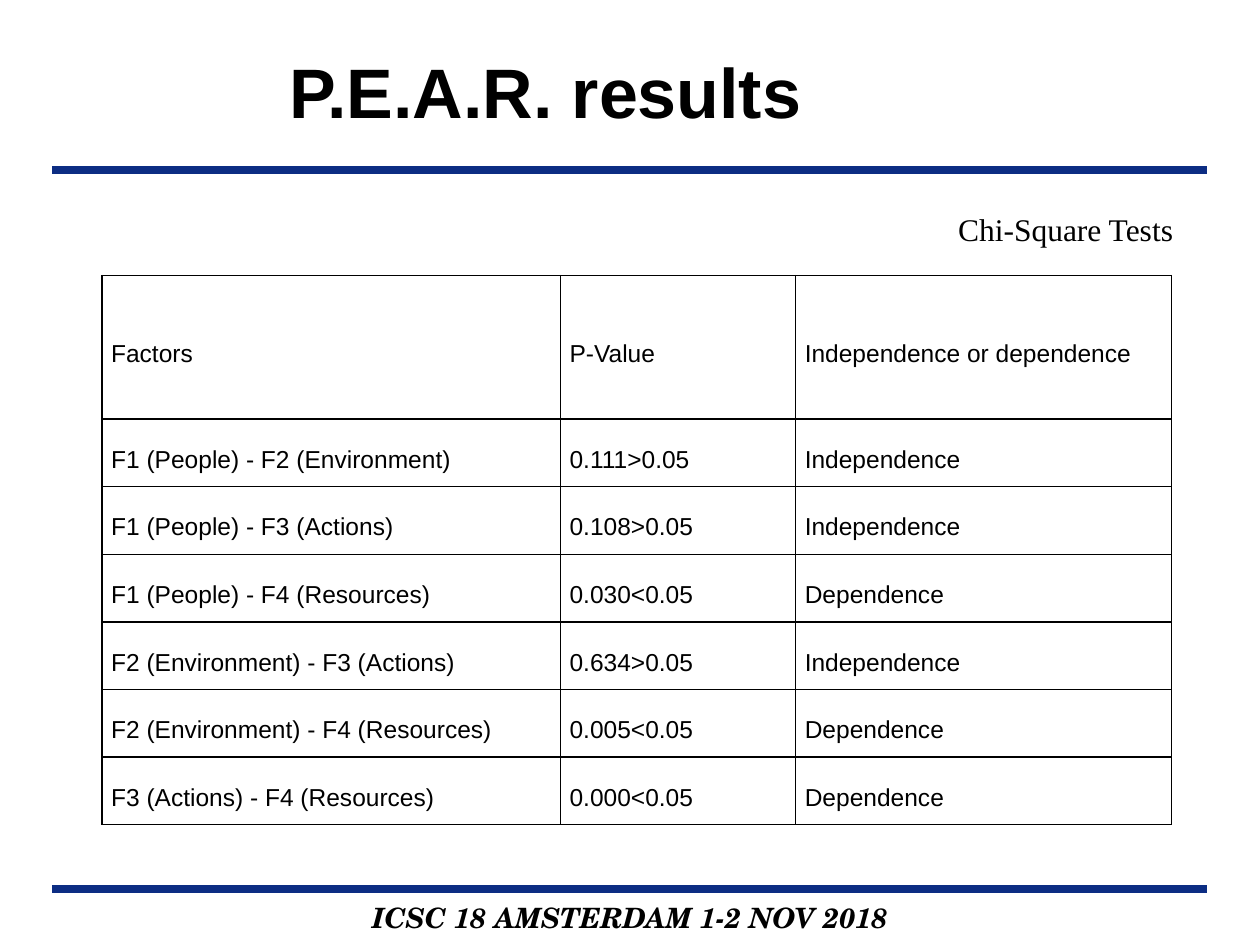
from dataclasses import dataclass

from lxml import etree
from pptx import Presentation
from pptx.dml.color import RGBColor
from pptx.enum import shapes, text
from pptx.oxml import ns
from pptx.util import Pt

# Content
TITLE = "P.E.A.R. results"
CAPTION = "Chi-Square Tests"
FOOTER = "ICSC 18 AMSTERDAM 1-2 NOV 2018"
ROWS = [
    ("Factors", "P-Value", "Independence or dependence"),
    ("F1 (People) - F2 (Environment)", "0.111>0.05", "Independence"),
    ("F1 (People) - F3 (Actions)", "0.108>0.05", "Independence"),
    ("F1 (People) - F4 (Resources)", "0.030<0.05", "Dependence"),
    ("F2 (Environment) - F3 (Actions)", "0.634>0.05", "Independence"),
    ("F2 (Environment) - F4 (Resources)", "0.005<0.05", "Dependence"),
    ("F3 (Actions) - F4 (Resources)", "0.000<0.05", "Dependence"),
]


@dataclass(frozen=True)
class Theme:
    ink: str = "000000"
    rule: str = "0C2D83"
    sans: str = "Arial"
    serif: str = "Times New Roman"
    footer_face: str = "TeX Gyre Schola"
    title_size: float = 40
    caption_size: float = 18
    footer_size: float = 16
    cell_size: float = 14


THEME = Theme()

# Layout, in points
PAGE_WIDTH, PAGE_HEIGHT = 720, 540
RULE_MARGIN, RULE_TOPS, RULE_WEIGHT = 30, (97, 508), 4.5
TITLE_AREA = (162, 24, 310, 55.5)
CAPTION_AREA = (537, 116.5, 144, 29)
FOOTER_AREA = (30, 511, 660, 27)
TABLE_LEFT, TABLE_TOP = 58.3, 157.5
COLUMN_WIDTHS = (262, 134.4, 214.8)
HEADER_HEIGHT, ROW_HEIGHT = 82, 38.65
BOX_INSET, CELL_INSET = 3.6, 5.2


def write(frame, words, *, face, size, bold=False, italic=False,
          align=text.PP_ALIGN.LEFT, line_spacing=1.0, after=0):
    para = frame.paragraphs[0]
    para.alignment = align
    para.line_spacing = line_spacing
    para.space_before, para.space_after = Pt(0), Pt(after)
    span = para.add_run()
    span.text = words
    span.font.name, span.font.size = face, Pt(size)
    span.font.bold, span.font.italic = bold, italic
    span.font.color.rgb = RGBColor.from_string(THEME.ink)


def fill_box(box, area, words, **style):
    box.left, box.top, box.width, box.height = map(Pt, area)
    frame = box.text_frame
    frame.word_wrap = True
    frame.auto_size = text.MSO_AUTO_SIZE.NONE
    frame.vertical_anchor = text.MSO_ANCHOR.TOP
    frame.margin_left = frame.margin_right = Pt(BOX_INSET)
    frame.margin_top = frame.margin_bottom = Pt(BOX_INSET)
    write(frame, words, **style)


def add_rule(page, top):
    rule = page.shapes.add_connector(
        shapes.MSO_CONNECTOR.STRAIGHT, Pt(RULE_MARGIN), Pt(top),
        Pt(PAGE_WIDTH - RULE_MARGIN), Pt(top))
    rule.line.color.rgb = RGBColor.from_string(THEME.rule)
    rule.line.width = Pt(RULE_WEIGHT)
    etree.SubElement(rule._element.spPr, ns.qn("a:effectLst"))


def border_cell(cell):
    properties = cell._tc.get_or_add_tcPr()
    for position, side in enumerate(("lnL", "lnR", "lnT", "lnB")):
        line = etree.Element(ns.qn(f"a:{side}"), w=str(Pt(1)))
        fill = etree.SubElement(line, ns.qn("a:solidFill"))
        etree.SubElement(fill, ns.qn("a:srgbClr"), val=THEME.ink)
        properties.insert(position, line)


def add_results(page):
    heights = [HEADER_HEIGHT] + [ROW_HEIGHT] * (len(ROWS) - 1)
    table = page.shapes.add_table(
        len(ROWS), len(COLUMN_WIDTHS), Pt(TABLE_LEFT), Pt(TABLE_TOP),
        Pt(sum(COLUMN_WIDTHS)), Pt(sum(heights))).table
    table.first_row = table.horz_banding = False
    for column, width in zip(table.columns, COLUMN_WIDTHS):
        column.width = Pt(width)
    for row, height, values in zip(table.rows, heights, ROWS):
        row.height = Pt(height)
        for cell, words in zip(row.cells, values):
            cell.fill.background()
            cell.vertical_anchor = text.MSO_ANCHOR.MIDDLE
            cell.margin_left = cell.margin_right = Pt(CELL_INSET)
            cell.margin_top = cell.margin_bottom = Pt(0)
            write(cell.text_frame, words, face=THEME.sans,
                  size=THEME.cell_size, line_spacing=1.5, after=6)
            border_cell(cell)


def main():
    deck = Presentation()
    deck.slide_width, deck.slide_height = Pt(PAGE_WIDTH), Pt(PAGE_HEIGHT)
    page = deck.slides.add_slide(deck.slide_layouts.get_by_name("Title Only"))

    # Rules and footer
    for top in RULE_TOPS:
        add_rule(page, top)
    fill_box(page.shapes.add_textbox(0, 0, 0, 0), FOOTER_AREA, FOOTER,
             face=THEME.footer_face, size=THEME.footer_size,
             bold=True, italic=True, align=text.PP_ALIGN.CENTER)

    # Title and caption
    fill_box(page.shapes.title, TITLE_AREA, TITLE,
             face=THEME.sans, size=THEME.title_size, bold=True)
    fill_box(page.shapes.add_textbox(0, 0, 0, 0), CAPTION_AREA, CAPTION,
             face=THEME.serif, size=THEME.caption_size,
             align=text.PP_ALIGN.CENTER)

    # Test results
    add_results(page)
    deck.save("out.pptx")


if __name__ == "__main__":
    main()
